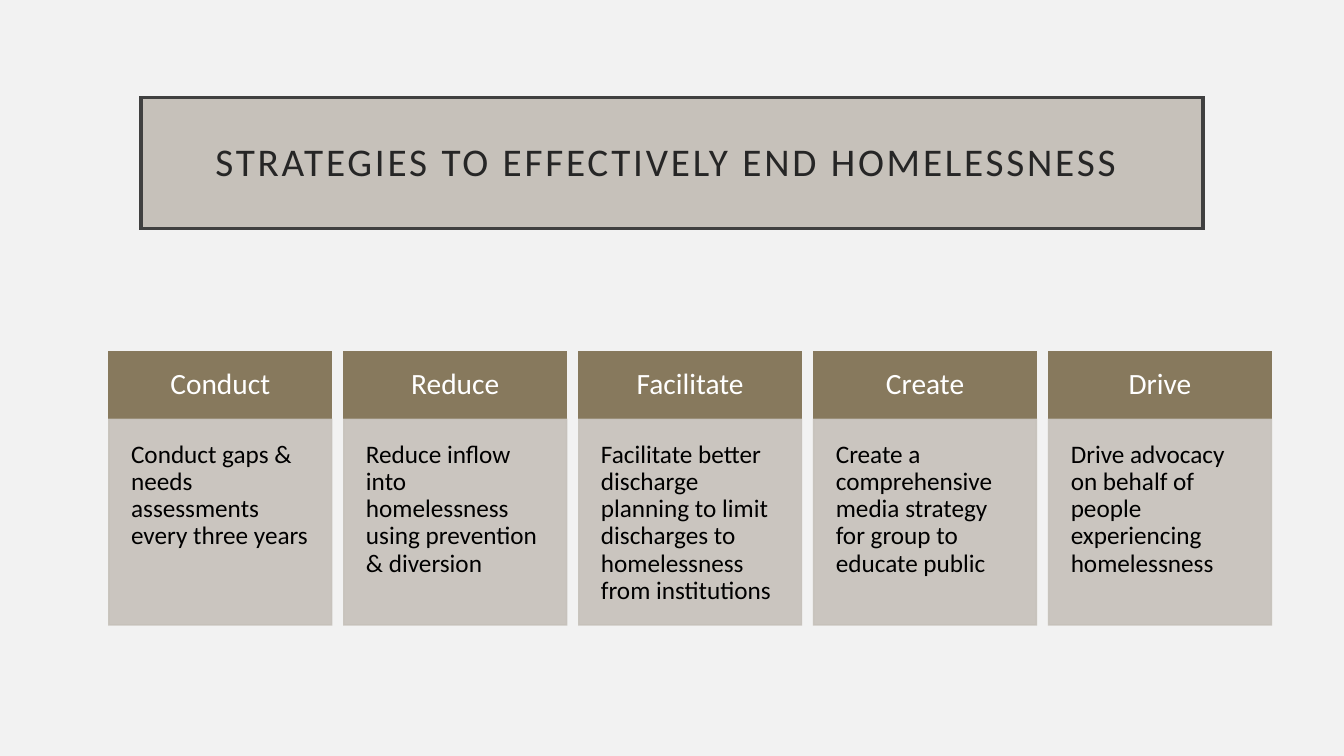
from lxml.etree import SubElement
from pptx import Presentation
from pptx.dml.color import RGBColor
from pptx.enum.shapes import MSO_SHAPE as SHAPE
from pptx.enum.text import MSO_ANCHOR as ANCHOR, PP_ALIGN as ALIGN
from pptx.oxml.ns import qn
from pptx.util import Inches, Pt


def color(value):
    return RGBColor.from_string(value)


class StrategySlide:
    font = "Calibri"
    background = "F2F2F2"
    taupe = "C6C1BA"
    olive = "87795D"
    border = "404040"
    title_ink = "262626"

    def __init__(self, prs):
        self.s = prs.slides.add_slide(prs.slide_layouts[6])
        fill = self.s.background.fill
        fill.solid()
        fill.fore_color.rgb = color(self.background)

    def box(self, left, top, width, height, fill, line, line_width, alpha=None):
        sp = self.s.shapes.add_shape(
            SHAPE.RECTANGLE, Inches(left), Inches(top), Inches(width), Inches(height))
        sp.shadow.inherit = False
        sp.line.width = Pt(line_width)
        for paint, value in ((sp.fill, fill), (sp.line.fill, line)):
            paint.solid()
            paint.fore_color.rgb = color(value)
        SubElement(sp.line._ln, qn("a:miter"), lim="800000")
        if alpha:
            for tint in sp._element.spPr.iter(qn("a:srgbClr")):
                SubElement(tint, qn("a:alpha"), val=str(alpha * 1000))
        return sp

    def text(self, sp, words, size, ink, inset, align, anchor, after=0, spacing=None):
        tf = sp.text_frame
        margin = Inches(inset)
        frame_format = {
            "word_wrap": True, "vertical_anchor": anchor,
            "margin_left": margin, "margin_right": margin,
            "margin_top": margin, "margin_bottom": margin}
        for name, value in frame_format.items():
            setattr(tf, name, value)
        p = tf.paragraphs[0]
        for name, value in {"alignment": align, "line_spacing": 0.9,
                            "space_after": Pt(after)}.items():
            setattr(p, name, value)
        r = p.add_run()
        r.text = words
        for name, value in {"name": self.font, "size": Pt(size)}.items():
            setattr(r.font, name, value)
        r.font.color.rgb = color(ink)
        if spacing:
            r.font._element.set("spc", str(spacing * 100))

    def title(self, words):
        sp = self.box(1.4, 0.97, 10.53, 1.3, self.taupe, self.border, 2.5)
        self.text(sp, words, 28, self.title_ink, 0.2, ALIGN.CENTER, ANCHOR.MIDDLE,
                  spacing=2)

    def card(self, left, heading, detail):
        head = self.box(left, 3.49, 2.21, 0.66, self.olive, self.olive, 1)
        self.text(head, heading, 21, "FFFFFF", 0.17, ALIGN.CENTER, ANCHOR.MIDDLE, 7)
        body = self.box(left, 4.16, 2.21, 2.04, self.taupe, self.taupe, 1, alpha=90)
        self.text(body, detail, 18, "000000", 0.22, ALIGN.LEFT, ANCHOR.TOP, 6)


STRATEGIES = [
    ("Conduct", "Conduct gaps & needs assessments every three years"),
    ("Reduce", "Reduce inflow into homelessness using prevention & diversion"),
    ("Facilitate", "Facilitate better discharge planning to limit discharges to "
                   "homelessness from institutions"),
    ("Create", "Create a comprehensive media strategy for group to educate public"),
    ("Drive", "Drive advocacy on behalf of people experiencing homelessness"),
]


def main():
    prs = Presentation()
    prs.slide_width = Inches(13.33)
    prs.slide_height = Inches(7.5)
    slide = StrategySlide(prs)
    slide.title("STRATEGIES TO EFFECTIVELY END HOMELESSNESS ")
    for i, (heading, detail) in enumerate(STRATEGIES):
        slide.card(1.08 + 2.33 * i, heading, detail)
    prs.save("out.pptx")


if __name__ == "__main__":
    main()
